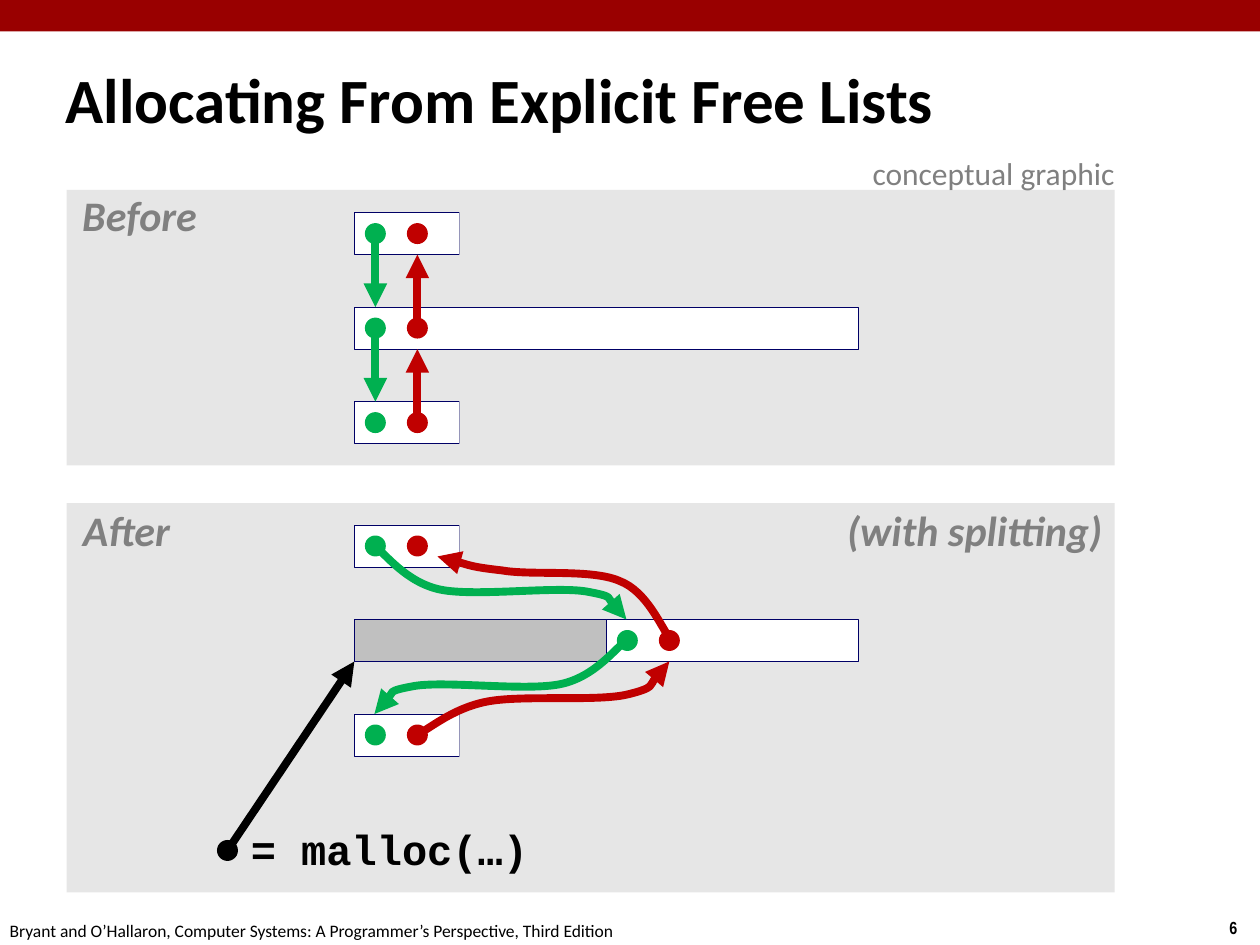
from lxml import etree
from pptx import Presentation
from pptx.dml.color import RGBColor
from pptx.enum.shapes import MSO_CONNECTOR, MSO_SHAPE
from pptx.enum.text import MSO_ANCHOR, PP_ALIGN
from pptx.oxml.ns import qn
from pptx.util import Pt

RECT, OVAL = MSO_SHAPE.RECTANGLE, MSO_SHAPE.OVAL
STRAIGHT = MSO_CONNECTOR.STRAIGHT
LEFT, CENTER = PP_ALIGN.LEFT, PP_ALIGN.CENTER
TOP, MIDDLE = MSO_ANCHOR.TOP, MSO_ANCHOR.MIDDLE

COLORS = {
    "banner": "990000", "panel": "E6E6E6", "white": "FFFFFF",
    "border": "000066", "allocated": "C0C0C0", "next": "00B050",
    "prev": "C00000", "black": "000000", "label": "808080",
}

# Grid of the list diagram, in points
BLOCK_X, BLOCK_W, BLOCK_H = 202.5, 60, 24
LARGE_W, ROW_STEP = 288, 54
BEFORE_Y, AFTER_Y = 121.5, 300
DOT = 12
NEXT_X, PREV_X = 12, 36  # pointer centres, from the left edge of a block


def rgb(name):
    return RGBColor.from_string(COLORS[name])


def write_text(frame, text, *, size, color="black", font="Calibri", bold=False,
               italic=False, align=LEFT, spacing=1.0):
    paragraph = frame.paragraphs[0]
    paragraph.alignment = align
    paragraph.line_spacing = spacing
    run = paragraph.add_run()
    run.text = text
    run.font.name = font
    run.font.size = Pt(size)
    run.font.bold = bold
    run.font.italic = italic
    run.font.color.rgb = rgb(color)


class Diagram:
    """Draws on one slide; all lengths are points."""

    pointer_width = 4.5
    border_width = 0.25

    def __init__(self, slide):
        self.slide = slide
        self.shapes = slide.shapes

    def shape(self, kind, x, y, w, h, fill, border=None):
        shape = self.shapes.add_shape(kind, Pt(x), Pt(y), Pt(w), Pt(h))
        shape.shadow.inherit = False
        shape.fill.solid()
        shape.fill.fore_color.rgb = rgb(fill)
        if border:
            shape.line.color.rgb = rgb(border)
            shape.line.width = Pt(self.border_width)
        else:
            shape.line.fill.background()

    def block(self, y, w=BLOCK_W, x=BLOCK_X, fill="white"):
        self.shape(RECT, x, y, w, BLOCK_H, fill, "border")

    def dot(self, x, y, color):
        self.shape(OVAL, x - DOT / 2, y - DOT / 2, DOT, DOT, color)

    def pointers(self, y, x=BLOCK_X):
        self.dot(x + NEXT_X, y + BLOCK_H / 2, "next")
        self.dot(x + PREV_X, y + BLOCK_H / 2, "prev")

    def style_arrow(self, line, color):
        line.color.rgb = rgb(color)
        line.width = Pt(self.pointer_width)
        ln = line._get_or_add_ln()
        etree.SubElement(ln, qn("a:tailEnd"), type="triangle")

    def arrow(self, x1, y1, x2, y2, color):
        arrow = self.shapes.add_connector(STRAIGHT, Pt(x1), Pt(y1), Pt(x2), Pt(y2))
        self.style_arrow(arrow.line, color)
        etree.SubElement(arrow._element.spPr, qn("a:effectLst"))

    def curve(self, points, color):
        """Cubic curve: a start, then two controls and an end per segment."""
        start, *rest = [(Pt(x), Pt(y)) for x, y in points]
        builder = self.shapes.build_freeform(*start)
        builder.add_line_segments(rest, close=False)
        curve = builder.convert_to_shape()
        curve.shadow.inherit = False
        curve.fill.background()
        self.style_arrow(curve.line, color)
        # Regroup each three straight steps as one cubic segment
        steps = list(curve._element.iter(qn("a:lnTo")))
        outline = steps[0].getparent()
        for i in range(0, len(steps), 3):
            cubic = etree.SubElement(outline, qn("a:cubicBezTo"))
            for step in steps[i:i + 3]:
                cubic.append(step[0])
                outline.remove(step)

    def text(self, text, x, y, w, h, inset=(7.2, 3.6), anchor=TOP, **style):
        box = self.shapes.add_textbox(Pt(x), Pt(y), Pt(w), Pt(h))
        frame = box.text_frame
        frame.word_wrap = False
        frame.vertical_anchor = anchor
        frame.margin_left = frame.margin_right = Pt(inset[0])
        frame.margin_top = frame.margin_bottom = Pt(inset[1])
        write_text(frame, text, **style)

    def label(self, text, x, y, w, **style):
        self.text(text, x, y, w, 34, inset=(3.6, 3.6), size=24, bold=True,
                  align=CENTER, spacing=0.9, **style)


def main():
    prs = Presentation()
    prs.slide_width, prs.slide_height = Pt(720), Pt(540)
    diagram = Diagram(prs.slides.add_slide(prs.slide_layouts[6]))

    # Banner, footer and title
    diagram.shape(RECT, 0, 0, 720, 18, "banner")
    diagram.text("6", 695.5, 520.5, 24.5, 19.5, size=10, font="Arial Narrow", bold=True)
    diagram.text("Bryant and O’Hallaron, Computer Systems: "
                 "A Programmer’s Perspective, Third Edition",
                 -1.5, 522, 366, 19.5, size=10)
    diagram.text("Allocating From Explicit Free Lists", 30.5, 36.5, 630, 45.5,
                 anchor=MIDDLE, size=36, bold=True, spacing=0.87)

    # Panels
    diagram.shape(RECT, 38, 287.5, 599, 222.5, "panel")
    diagram.shape(RECT, 38, 108.5, 599, 157.5, "panel")

    # Before: three free blocks, linked both ways
    before_rows = [BEFORE_Y + i * ROW_STEP for i in range(3)]
    for y, width in zip(before_rows, (BLOCK_W, LARGE_W, BLOCK_W)):
        diagram.block(y, width)
        diagram.pointers(y)
    next_x, prev_x = BLOCK_X + NEXT_X, BLOCK_X + PREV_X
    for upper, lower in zip(before_rows, before_rows[1:]):
        diagram.arrow(next_x, upper + BLOCK_H / 2, next_x, lower, "next")
        diagram.arrow(prev_x, lower + BLOCK_H / 2, prev_x, upper + BLOCK_H, "prev")

    # After: the middle block is split into allocated and free halves
    first_y, split_y, last_y = [AFTER_Y + i * ROW_STEP for i in range(3)]
    half = LARGE_W / 2
    remainder_x = BLOCK_X + half
    for y in (first_y, last_y):
        diagram.block(y)
        diagram.pointers(y)
    diagram.block(split_y, half, remainder_x)
    diagram.block(split_y, half, fill="allocated")
    diagram.pointers(split_y, remainder_x)

    # Panel-coloured strips beside the small blocks
    for y in (before_rows[0], before_rows[2], first_y, last_y):
        diagram.shape(RECT, BLOCK_X + BLOCK_W, y - 6, 24, 36, "panel")

    # Links to and from the remaining free block
    next_in = [(214, 312), (220, 316), (232, 333), (252, 337), (272, 341),
               (317, 335), (335, 338), (352, 341), (353.5, 350.5), (358, 354)]
    next_out = [(572 - x, y + ROW_STEP) for x, y in next_in]
    prev_out = [(383, 365), (378, 359), (370, 338), (354, 332), (338, 325),
                (304, 329), (287, 326), (269, 324), (258, 320), (250, 318)]
    prev_in = [(238, 420), (245, 417), (258, 405), (278, 401), (298, 397),
               (340, 401), (358, 397), (375, 393), (377, 382), (382.5, 378)]
    for link, color in ((next_in, "next"), (next_out, "next"),
                        (prev_out, "prev"), (prev_in, "prev")):
        diagram.curve(link, color)

    # Returned pointer
    diagram.dot(130, 486, "black")
    diagram.arrow(130, 486, BLOCK_X, split_y + BLOCK_H, "black")
    diagram.label("= malloc(…)", 139, 470, 167, font="Courier New")

    # Panel labels
    for text, x, y, width in (("Before", 43, 108, 73.5), ("After", 43, 288, 58.5),
                              ("(with splitting)", 479.5, 288, 155)):
        diagram.label(text, x, y, width, color="label", italic=True)
    diagram.text("conceptual graphic", 491.5, 84.5, 156, 29, size=18, color="label")

    prs.save("out.pptx")


if __name__ == "__main__":
    main()
